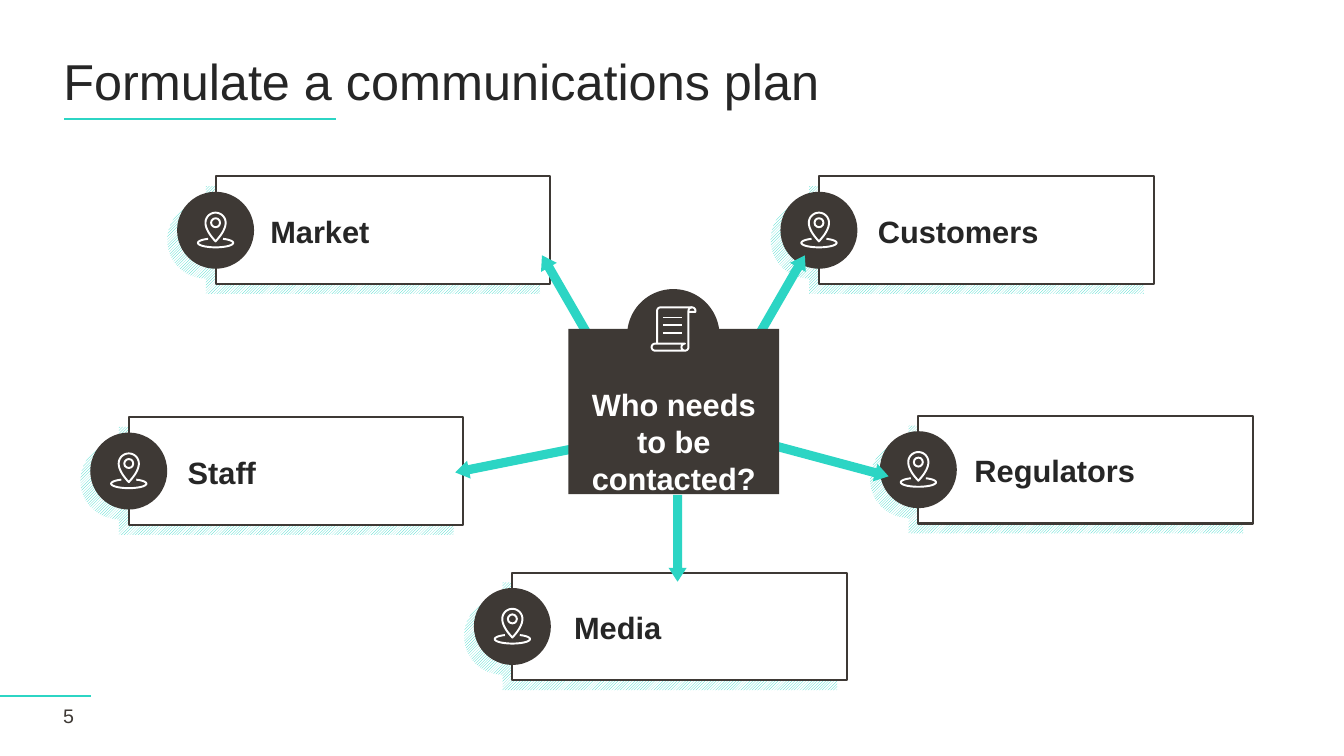
from math import cos, radians, sin

from lxml.etree import SubElement
from pptx import Presentation
from pptx.dml.color import RGBColor
from pptx.enum.dml import MSO_PATTERN
from pptx.enum.shapes import MSO_CONNECTOR, MSO_SHAPE as SHAPE
from pptx.enum.text import MSO_ANCHOR as ANCHOR, MSO_AUTO_SIZE, PP_ALIGN as ALIGN
from pptx.oxml.ns import qn
from pptx.util import Pt

COLORS = {"teal": "2CD5C4", "dark": "3E3935", "ink": "262626", "white": "FFFFFF"}
FONT = "Arial"

TITLE = "Formulate a communications plan"
PAGE_NUMBER = "5"
QUESTION = "Who needs to be contacted?"
AUDIENCES = [
    {"name": "Media", "card": (366, 409), "label": 403, "arrow": (477.5, 353.5, 62, 0)},
    {"name": "Regulators", "card": (656, 297), "label": 689, "arrow": (585.5, 284.5, 88.5, 285)},
    {"name": "Staff", "card": (92, 298), "label": 127, "arrow": (362, 284.5, 88.5, 78.7)},
    {"name": "Market", "card": (154, 126), "label": 186, "arrow": (397, 178, 65.5, 150)},
    {"name": "Customers", "card": (585, 126), "label": 620, "arrow": (552, 178, 65.5, 210)},
]
CARD_W, CARD_H = 239, 77
BADGE_R = 27.5
SHADOW_SHIFT = 7
ARROW_W = 13
ICON_LINE = 1.4


def rgb(name):
    return RGBColor.from_string(COLORS[name])


def paint(shape, fill=None, line=None, width=1.5):
    shape.shadow.inherit = False
    if fill:
        shape.fill.solid()
        shape.fill.fore_color.rgb = rgb(fill)
    else:
        shape.fill.background()
    if line:
        shape.line.color.rgb = rgb(line)
        shape.line.width = Pt(width)
    else:
        shape.line.fill.background()


def preset(kind, x, y, w, h, fill=None, line=None, width=1.5):
    shape = slide.shapes.add_shape(kind, Pt(x), Pt(y), Pt(w), Pt(h))
    paint(shape, fill, line, width)
    return shape


def disc(cx, cy, r, fill=None, line=None, width=1.5):
    return preset(SHAPE.OVAL, cx - r, cy - r, 2 * r, 2 * r, fill, line, width)


def straight(x1, x2, y, color, width):
    rule = slide.shapes.add_connector(MSO_CONNECTOR.STRAIGHT, Pt(x1), Pt(y), Pt(x2), Pt(y))
    rule.line.color.rgb = rgb(color)
    rule.line.width = Pt(width)
    SubElement(rule._element.spPr, qn("a:effectLst"))


def arc(cx, cy, rx, ry, start, end, steps=24):
    angles = [radians(start + (end - start) * i / steps) for i in range(steps + 1)]
    return [(cx + rx * cos(a), cy + ry * sin(a)) for a in angles]


def outline(points, close=False):
    first, *rest = [(Pt(x), Pt(y)) for x, y in points]
    builder = slide.shapes.build_freeform(*first)
    builder.add_line_segments(rest, close=close)
    return builder.convert_to_shape()


def stroke(points, close=False):
    paint(outline(points, close), line="white", width=ICON_LINE)


def write(frame, text, size, color, bold=False, align=ALIGN.LEFT, anchor=ANCHOR.TOP):
    frame.text = text
    frame.word_wrap = True
    frame.auto_size = MSO_AUTO_SIZE.NONE
    frame.vertical_anchor = anchor
    paragraph = frame.paragraphs[0]
    paragraph.alignment = align
    font = paragraph.runs[0].font
    font.name, font.size, font.bold = FONT, Pt(size), bold
    font.color.rgb = rgb(color)
    return paragraph


def text_box(x, y, w, h, *args, **options):
    box = slide.shapes.add_textbox(Pt(x), Pt(y), Pt(w), Pt(h))
    write(box.text_frame, *args, **options)


def pin_icon(cx, cy):
    head_r, head_y, tip_y, bend_y = 7.2, cy - 5.4, cy + 7.9, cy + 0.2
    side = []
    for i in range(1, 13):
        t = i / 12
        dx = head_r * (1 - t * t)
        side.append((dx, (1 - t) ** 2 * head_y + 2 * t * (1 - t) * bend_y + t * t * tip_y))
    right = [(cx + dx, y) for dx, y in side]
    left = [(cx - dx, y) for dx, y in side[-2::-1]]
    stroke(arc(cx, head_y, head_r, head_r, 180, 360) + right + left, close=True)
    disc(cx, head_y, 3.2, line="white", width=ICON_LINE)
    stroke(arc(cx, cy + 9, 12.6, 3.2, -65, 245, 48))


def scroll_icon():
    r = 2.5
    top, bottom = 222.1, 248
    left, right, foot_left, foot_right = 471.9, 494.3, 468, 489.3
    stroke([(left - r, bottom - r)] + arc(left, top, r, r, 180, 270) + [(right, top - r)])
    stroke(
        [(right - r, top + 0.7), (right + r, top + 0.7)]
        + arc(right, top, r, r, 0, -180)
        + arc(foot_right, bottom, r, r, 0, 90)
        + arc(foot_left, bottom, r, r, 90, 270)
        + arc(foot_right, bottom, r, r, 270, 90)
    )
    for row in range(3):
        straight(473.5, 487, 226.8 + 5.4 * row, "white", ICON_LINE)


def audience_card(name, x, y, label_x):
    middle = y + CARD_H / 2
    sx, sy = x - SHADOW_SHIFT, y + SHADOW_SHIFT
    bump = arc(sx, middle + SHADOW_SHIFT, BADGE_R, BADGE_R, 90, 270)
    corners = [(sx, sy), (sx + CARD_W, sy), (sx + CARD_W, sy + CARD_H), (sx, sy + CARD_H)]
    hatch = outline(corners + bump, close=True)
    paint(hatch)
    hatch.fill.patterned()
    hatch.fill.pattern = MSO_PATTERN.DARK_UPWARD_DIAGONAL
    hatch.fill.fore_color.rgb = rgb("teal")
    hatch.fill.back_color.rgb = rgb("white")
    preset(SHAPE.RECTANGLE, x, y, CARD_W, CARD_H, "white", "dark")
    disc(x, middle, BADGE_R, "dark")
    text_box(label_x, y + 22.3, 184, 34, name, 22, "ink", bold=True)
    pin_icon(x, middle)


def block_arrow(x, y, length, angle):
    arrow = preset(SHAPE.DOWN_ARROW, x, y, ARROW_W, length, "teal")
    arrow.adjustments[0], arrow.adjustments[1] = 0.5, 0.764
    arrow.rotation = angle


prs = Presentation()
prs.slide_width, prs.slide_height = Pt(960), Pt(540)
slide = prs.slides.add_slide(prs.slide_layouts[5])

title = slide.shapes.title
title.left, title.top, title.width, title.height = Pt(38), Pt(29), Pt(881), Pt(63)
write(title.text_frame, TITLE, 36, "ink", anchor=ANCHOR.MIDDLE).line_spacing = 0.9
straight(46, 240, 85, "teal", 1.5)
straight(0, 65, 497, "teal", 1.5)
text_box(38, 502.5, 41, 17.5, PAGE_NUMBER, 14, "dark", anchor=ANCHOR.MIDDLE)

for audience in AUDIENCES:
    audience_card(audience["name"], *audience["card"], audience["label"])
for audience in AUDIENCES:
    block_arrow(*audience["arrow"])

preset(SHAPE.RECTANGLE, 406, 235, 150.5, 118, "dark")
disc(481, 239.5, 33, "dark")
text_box(406, 272, 150.5, 87, QUESTION, 22, "white", bold=True, align=ALIGN.CENTER)
scroll_icon()

prs.save("out.pptx")
